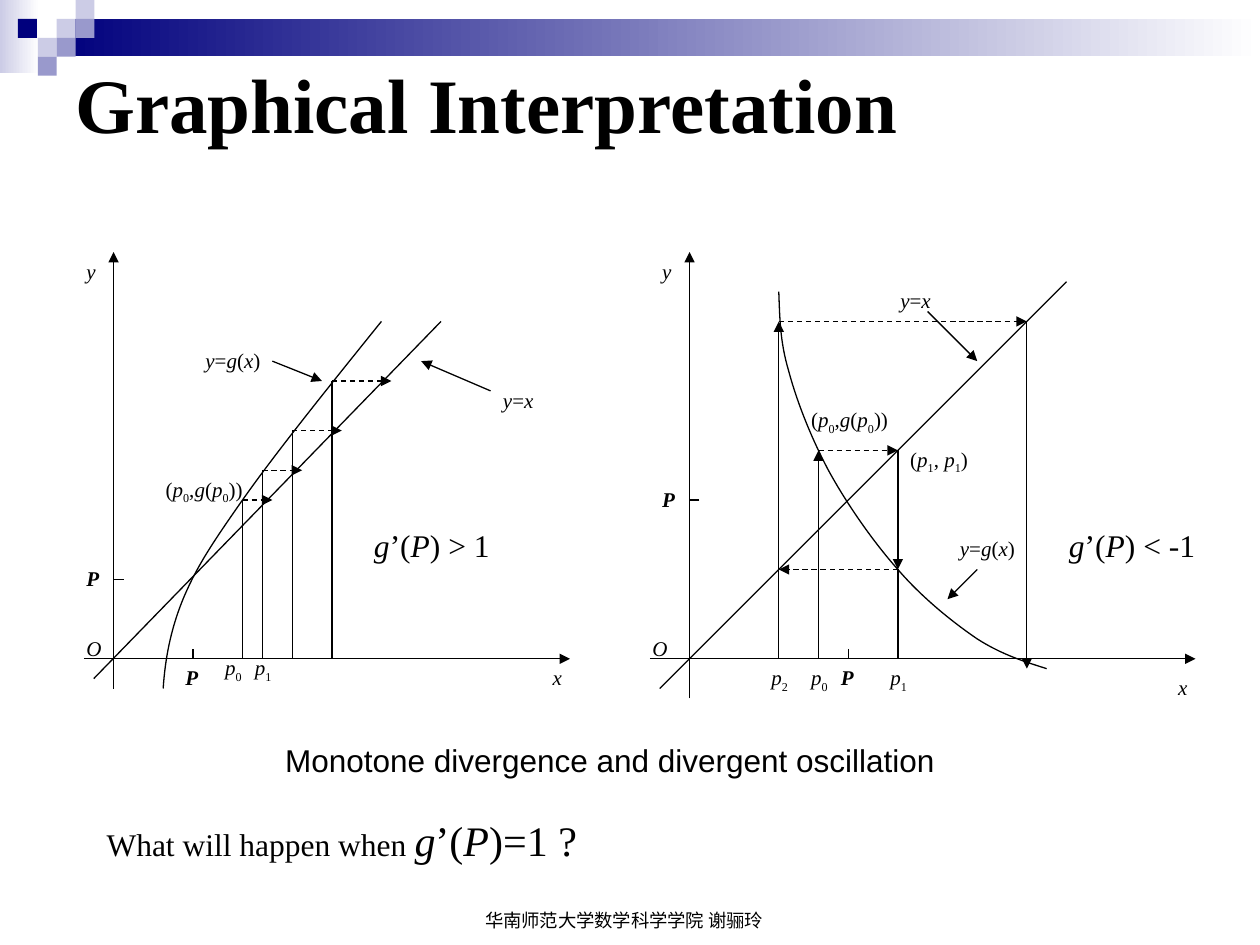
import itertools

import pptx
import pptx.dml.color
import pptx.enum.dml
import pptx.enum.shapes
import pptx.enum.text
import pptx.oxml.ns
import pptx.util
from lxml import etree

COLORS = {"ink": "000000", "navy": "00007D", "violet": "9999CC", "pale": "CCCCE6", "white": "FFFFFF"}
COLORS = {name: pptx.dml.color.RGBColor.from_string(value) for name, value in COLORS.items()}
SERIF, SANS = "Times New Roman", "Arial"
FORMULA, PLAIN = True, False

presentation = pptx.Presentation()
presentation.slide_width = pptx.util.Inches(10)
presentation.slide_height = pptx.util.Inches(7.5)
slide = presentation.slides.add_slide(presentation.slide_layouts[6])
UNIT = presentation.slide_width / 127  # the page is 127 columns wide, rows are as high
TILE = pptx.util.Inches(0.15)


def add_text(shapes, box, pieces, font=SERIF, bold=False, anchor="TOP"):
    """Write (text, size, is_formula) pieces; formulas get italic letters and indices after p."""
    shape = shapes.add_textbox(*(round(value * UNIT) for value in box))
    frame = shape.text_frame
    frame.word_wrap = True
    frame.vertical_anchor = pptx.enum.text.MSO_ANCHOR[anchor]
    paragraph = frame.paragraphs[0]
    for text, size, is_formula in pieces:
        styles = [
            (is_formula and letter.isalpha(), is_formula and letter.isdigit() and before == "p")
            for before, letter in zip(" " + text, text)
        ]
        for (italic, index), pairs in itertools.groupby(zip(styles, text), key=lambda pair: pair[0]):
            run = paragraph.add_run()
            run.text = "".join(letter for _, letter in pairs)
            values = {"name": font, "size": pptx.util.Pt(size), "bold": bold, "italic": italic}
            for name, value in values.items():
                setattr(run.font, name, value)
            run.font.color.rgb = COLORS["ink"]
            if index:
                run._r.get_or_add_rPr().set("baseline", "-25000")


def add_line(shapes, origin, start, end, arrow=False, dashed=False):
    """Draw a line between two graph points, with y counted upwards from the origin."""
    ends = [
        round(value * UNIT)
        for x, y in (start, end)
        for value in (origin[0] + x, origin[1] - y)
    ]
    connector = shapes.add_connector(pptx.enum.shapes.MSO_CONNECTOR.STRAIGHT, *ends)
    connector.line.color.rgb = COLORS["ink"]
    connector.line.width = pptx.util.Pt(0.75)
    if dashed:
        connector.line.dash_style = pptx.enum.dml.MSO_LINE.DASH
    if arrow:
        tail = etree.SubElement(connector.line._get_or_add_ln(), pptx.oxml.ns.qn("a:tailEnd"))
        tail.set("type", "triangle")
    etree.SubElement(connector._element.spPr, pptx.oxml.ns.qn("a:effectLst"))


# Header band, in tiles: left, top, width, height, colours
header = [
    (0, 0, 2.07, 3.87, ["pale", "white"]),
    (3, 1, 63.67, 1.97, ["navy", "white"]),
    (3, 1, 1, 1, ["pale"]),
    (4, 0, 1, 1, ["pale"]),
    (4, 1, 1, 1, ["violet"]),
    (2, 2, 1, 1, ["pale"]),
    (0.95, 1, 1, 1, ["navy"]),
    (3, 2, 1, 1, ["violet"]),
    (2, 3, 1, 1, ["violet"]),
]
for *box, names in header:
    shape = slide.shapes.add_shape(
        pptx.enum.shapes.MSO_SHAPE.RECTANGLE, *(round(value * TILE) for value in box)
    )
    shape.shadow.inherit = False
    shape.line.fill.background()
    if len(names) == 1:
        shape.fill.solid()
        shape.fill.fore_color.rgb = COLORS[names[0]]
    else:
        shape.fill.gradient()
        shape.fill.gradient_angle = 0
        for stop, name in zip(shape.fill.gradient_stops, names):
            stop.color.rgb = COLORS[name]

add_text(slide.shapes, (6.35, 0.85, 114.3, 19), [("Graphical Interpretation", 44, PLAIN)],
         bold=True, anchor="MIDDLE")
add_text(slide.shapes, (47.65, 91, 32.8, 3.2), [("华南师范大学数学科学学院 谢骊玲", 10.5, PLAIN)], font=SANS)

# Graph points are in columns right of and rows above the origin
stairs = [(13, 16), (15, 19), (18, 23), (22, 28)]
graphs = [
    {
        "origin": (11.45, 66.4),
        "lines": [((-2, -2), (33, 34)), ((8, 0), (8, 1)), ((1, 8), (0, 8)), ((13, 0), (13, 16))]
        + [((x, top), (x, 0)) for (_, top), (x, _) in zip(stairs, stairs[1:])]
        + [((x, low), (x, high)) for (_, low), (x, high) in zip(stairs, stairs[1:])],
        "arrows": [((-3, 0), (46, 0)), ((0, -3), (0, 41)),
                   ((16, 30), (21, 28)), ((38, 27), (31, 30))],
        "dashed": [((x, y), (y, y)) for x, y in stairs],
        "curve": [(5, -3), (5.2, -0.1), (5.7, 2.8), (7, 6), (8.3, 9.1), (9.7, 11.3), (13, 16),
                  (16.3, 20.7), (21.6, 27.3), (27, 34)],
        "labels": [("O", -4, 3, 5), ("P", 6, 0, 5), ("P", -4, 10, 3), ("x", 43, 0, 5),
                   ("y", -4, 41, 5), ("p0", 10, 1, 8), ("p1", 13, 1, 8),
                   ("(p0,g(p0))", 4, 19, 11), ("y=g(x)", 8, 32, 9), ("y=x", 38, 28, 9)],
        "slope": ("g’(P) > 1", 25, 14, 23),
    },
    {
        "origin": (69.5, 66.4),
        "lines": [((-3, -3), (38, 38)), ((16, 1), (16, 0)), ((1, 16), (0, 16)),
                  ((21, 9), (21, 0)), ((9, 9), (9, 0))],
        "arrows": [((-4, 0), (51, 0)), ((0, -4), (0, 41)), ((29, 9), (26, 6)),
                   ((24, 35), (29, 30)), ((13, 0), (13, 21)), ((21, 21), (21, 9)),
                   ((9, 9), (9, 34)), ((34, 34), (34, -1))],
        "dashed": [((13, 21), (21, 21)), ((21, 9), (9, 9)), ((9, 34), (34, 34))],
        "curve": [(9, 37), (9.1, 34.5), (9.1, 32), (10, 29), (10.8, 26), (12.2, 22.4),
                  (14, 19), (15.8, 15.7), (18.5, 11.8), (21, 9), (23.4, 6.2),
                  (26.5, 3.7), (29, 2), (31.5, 0.4), (33.8, -0.3), (36, -1)],
        "labels": [("y=x", 20, 38, 9), ("O", -5, 3, 5), ("x", 48, -1, 5), ("y", -4, 41, 5),
                   ("y=g(x)", 26, 13, 9), ("p0", 11, 0, 6), ("p1", 19, 0, 8), ("p2", 7, 0, 8),
                   ("P", 14, 0, 4), ("P", -4, 18, 4), ("(p0,g(p0))", 11, 26, 11),
                   ("(p1, p1)", 21, 22, 11)],
        "slope": ("g’(P) < -1", 37, 14, 20.5),
    },
]
for graph in graphs:
    shapes = slide.shapes.add_group_shape().shapes
    left, base = origin = graph["origin"]
    for kind in ("lines", "arrows", "dashed"):
        for start, end in graph[kind]:
            add_line(shapes, origin, start, end, arrow=kind != "lines", dashed=kind == "dashed")

    points = [(round((left + x) * UNIT), round((base - y) * UNIT)) for x, y in graph["curve"]]
    builder = shapes.build_freeform(*points[0])
    builder.add_line_segments(points[1:], close=False)
    curve = builder.convert_to_shape()
    # Every three segments become one cubic curve
    segments = list(curve._element.iter(pptx.oxml.ns.qn("a:lnTo")))
    outline = segments[0].getparent()
    for first in range(0, len(segments), 3):
        cubic = etree.SubElement(outline, pptx.oxml.ns.qn("a:cubicBezTo"))
        for segment in segments[first:first + 3]:
            cubic.append(segment[0])
            outline.remove(segment)
    curve.shadow.inherit = False
    curve.fill.background()
    curve.line.color.rgb = COLORS["ink"]
    curve.line.width = pptx.util.Pt(0.75)

    for text, x, y, width in graph["labels"]:
        add_text(shapes, (left + x, base - y, width, 3.8), [(text, 12, FORMULA)], bold=text == "P")
    text, x, y, width = graph["slope"]
    add_text(shapes, (left + x, base - y, width, 5), [(text, 18, FORMULA)])

add_text(slide.shapes, (27.5, 74.05, 76, 5),
         [("Monotone divergence and divergent oscillation", 18, PLAIN)], font=SANS)
add_text(slide.shapes, (9.5, 81.5, 94, 6.4),
         [("What will happen when ", 18, PLAIN), ("g’(P)=1 ?", 24, FORMULA)])

presentation.save("out.pptx")
